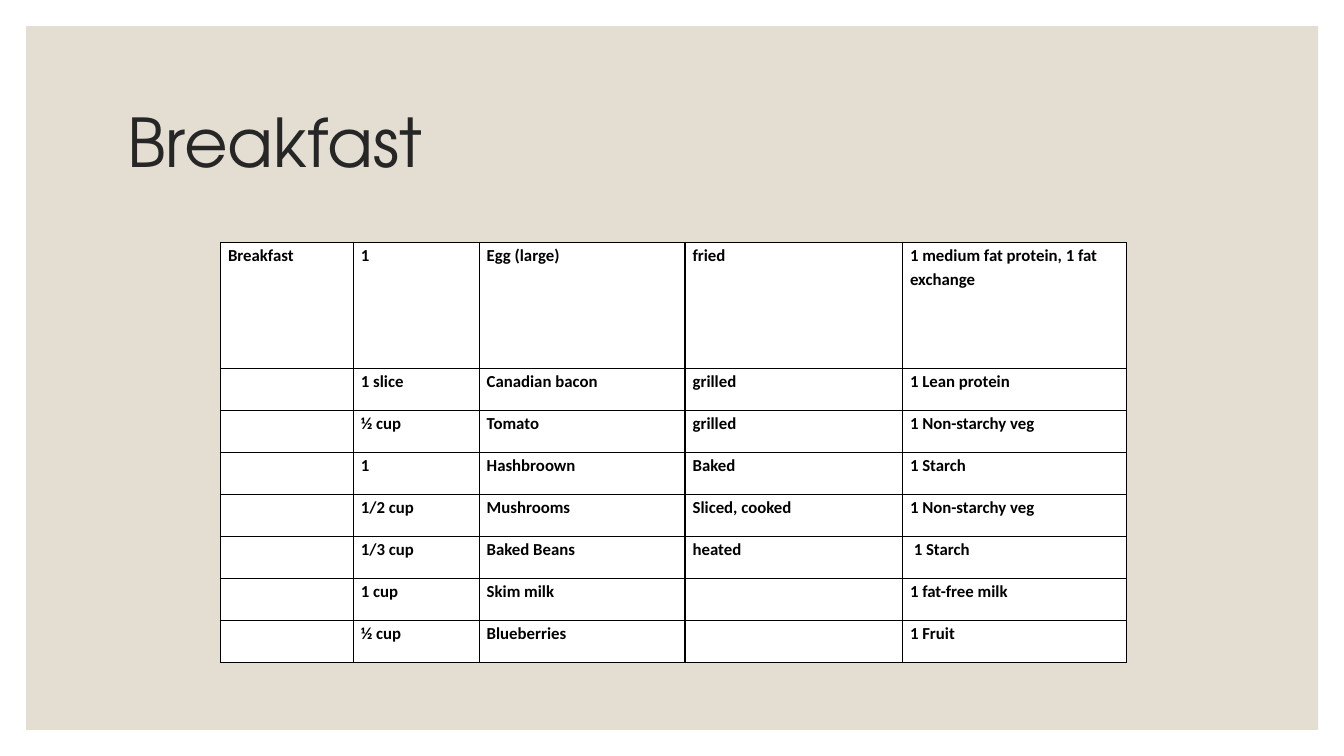
from lxml.etree import SubElement
from pptx import Presentation
from pptx.dml.color import RGBColor
from pptx.enum.shapes import MSO_SHAPE
from pptx.enum.text import MSO_ANCHOR
from pptx.oxml.ns import qn
from pptx.util import Pt

WHITE = RGBColor(0xFF, 0xFF, 0xFF)
SAND = RGBColor(0xE3, 0xDE, 0xD1)
CHARCOAL = RGBColor(0x26, 0x26, 0x26)
BLACK = RGBColor(0, 0, 0)

COLUMN_WIDTHS = [95, 90, 147.3, 155.5, 160]
ROW_HEIGHTS = [90] + [30] * 7
MENU = [
    ("Breakfast", "1", "Egg (large)", "fried", "1 medium fat protein, 1 fat exchange"),
    ("", "1 slice", "Canadian bacon", "grilled", "1 Lean protein"),
    ("", "½ cup", "Tomato", "grilled", "1 Non-starchy veg"),
    ("", "1", "Hashbroown", "Baked", "1 Starch"),
    ("", "1/2 cup", "Mushrooms", "Sliced, cooked", "1 Non-starchy veg"),
    ("", "1/3 cup", "Baked Beans", "heated", " 1 Starch"),
    ("", "1 cup", "Skim milk", "", "1 fat-free milk"),
    ("", "½ cup", "Blueberries", "", "1 Fruit"),
]


def write(paragraph, words, font, size, color, spacing, bold=False):
    """Add one styled run to a paragraph."""
    paragraph.line_spacing = spacing
    run = paragraph.add_run()
    run.text = words
    run.font.name = font
    run.font.size = Pt(size)
    run.font.bold = bold
    run.font.color.rgb = color


def add_panel(slide, left, top, width, height):
    """Draw the sand panel behind the content."""
    panel = slide.shapes.add_shape(
        MSO_SHAPE.RECTANGLE, Pt(left), Pt(top), Pt(width), Pt(height))
    panel.shadow.inherit = False
    panel.fill.solid()
    panel.fill.fore_color.rgb = SAND
    panel.line.fill.background()


def add_heading(slide, left, top, width, height):
    """Write the heading, centred vertically in its box."""
    heading = slide.shapes.add_textbox(Pt(left), Pt(top), Pt(width), Pt(height))
    frame = heading.text_frame
    frame.word_wrap = True
    frame.vertical_anchor = MSO_ANCHOR.MIDDLE
    write(frame.paragraphs[0], "Breakfast", "TeX Gyre Adventor", 48, CHARCOAL, 0.9)


def add_borders(cell):
    """Give a cell a thin black line on every side."""
    properties = cell._tc.get_or_add_tcPr()
    for side in ("a:lnL", "a:lnR", "a:lnT", "a:lnB"):
        border = SubElement(properties, qn(side), w=str(Pt(1)))
        fill = SubElement(border, qn("a:solidFill"))
        SubElement(fill, qn("a:srgbClr"), val=str(BLACK))


def fill_cell(cell, words):
    """Style one menu cell and write its words."""
    cell.margin_left = cell.margin_right = Pt(5.4)
    cell.margin_top = cell.margin_bottom = 0
    add_borders(cell)
    cell.fill.solid()
    cell.fill.fore_color.rgb = WHITE
    if words:
        write(cell.text_frame.paragraphs[0], words, "Calibri", 12, BLACK, 1.15, True)


def add_menu(slide, left, top, width, height):
    """Lay out the breakfast table in its box."""
    menu = slide.shapes.add_table(
        len(MENU), len(COLUMN_WIDTHS), Pt(left), Pt(top), Pt(width), Pt(height)).table
    menu.first_row = menu.horz_banding = False
    for column, share in zip(menu.columns, COLUMN_WIDTHS):
        column.width = Pt(width * share / sum(COLUMN_WIDTHS))
    for row, share, entries in zip(menu.rows, ROW_HEIGHTS, MENU):
        row.height = Pt(height * share / sum(ROW_HEIGHTS))
        for cell, words in zip(row.cells, entries):
            fill_cell(cell, words)


def main():
    """Build and save the breakfast slide."""
    deck = Presentation()
    deck.slide_width, deck.slide_height = Pt(960), Pt(540)
    slide = deck.slides.add_slide(deck.slide_layouts[6])
    slide.background.fill.solid()
    slide.background.fill.fore_color.rgb = WHITE
    add_panel(slide, 18.7, 18.7, 922.8, 502.6)
    add_heading(slide, 84, 50.4, 792, 108)
    add_menu(slide, 157.5, 173.2, 647, 300.4)
    deck.save("out.pptx")


if __name__ == "__main__":
    main()
